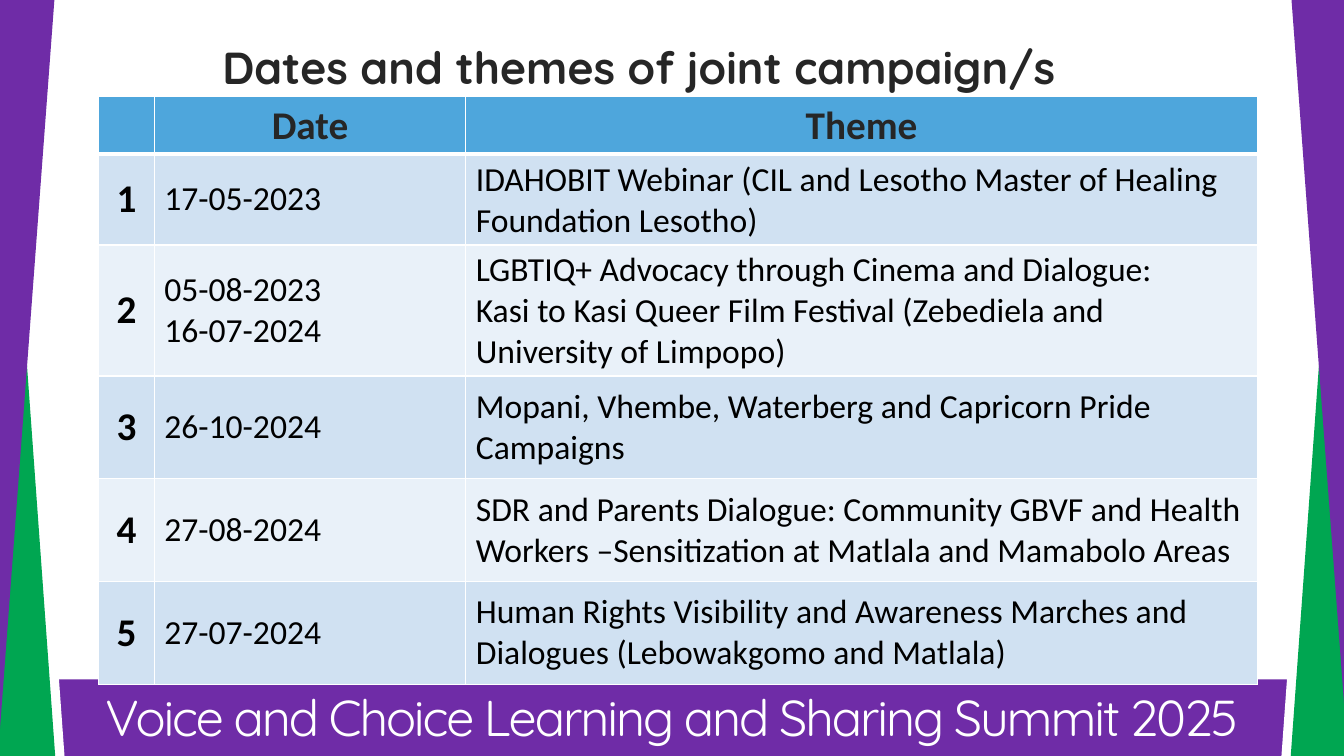
from lxml.etree import SubElement
from pptx import Presentation
from pptx.dml.color import RGBColor
from pptx.enum.shapes import MSO_SHAPE as Preset
from pptx.enum.text import MSO_ANCHOR as Anchor, MSO_AUTO_SIZE as AutoSize, PP_ALIGN as Align
from pptx.oxml.ns import qn
from pptx.util import Inches, Pt

WIDTH, HEIGHT = 13.33, 7.5
PURPLE, GREEN, WHITE = "6F2CA7", "00A651", "FFFFFF"
DARK, BLACK = "262626", "000000"
HEADER_FILL, BAND_FILLS = "4EA6DC", ("D0E1F2", "E9F1F9")

COLUMN_WIDTHS = (0.55, 3.09, 7.85)
ROW_HEIGHTS = (0.57, 0.9, 1.3, 1.02, 1.02, 1.02)
CAMPAIGNS = [
    (["17-05-2023"],
     ["IDAHOBIT Webinar (CIL and Lesotho Master of Healing Foundation Lesotho)"]),
    (["05-08-2023", "16-07-2024"],
     ["LGBTIQ+ Advocacy through Cinema and Dialogue:",
      "Kasi to Kasi Queer Film Festival (Zebediela and University of Limpopo)"]),
    (["26-10-2024"],
     ["Mopani, Vhembe, Waterberg and Capricorn Pride Campaigns"]),
    (["27-08-2024"],
     ["SDR and Parents Dialogue: Community GBVF and Health Workers "
      "–Sensitization at Matlala and Mamabolo Areas"]),
    (["27-07-2024"],
     ["Human Rights Visibility and Awareness Marches and Dialogues "
      "(Lebowakgomo and Matlala)"]),
]

# Outlines along the left edge; the right edge mirrors them.
EDGE_OUTLINES = [
    (WHITE, [(0.64, 7.5), (0.09, 7.5), (0.07, -0.02), (0.1, 0.03)]),
    (GREEN, [(0.55, 7.53), (0, 7.53), (-0.02, 0), (0.01, 0.05)]),
    (PURPLE, [(0, 0), (0.54, 0), (-0.02, 7.5), (0, 7.5)]),
]


def color(value):
    return RGBColor.from_string(value)


def paint(shape, value):
    shape.shadow.inherit = False
    shape.fill.solid()
    shape.fill.fore_color.rgb = color(value)
    shape.line.fill.background()


def add_outline(group, points, value):
    vertices = [(Inches(x), Inches(y)) for x, y in points]
    builder = group.shapes.build_freeform(*vertices[0])
    builder.add_line_segments(vertices[1:], close=True)
    paint(builder.convert_to_shape(), value)


def add_frame(slide):
    """Draw the bottom band and the slanted strips on both edges."""
    group = slide.shapes.add_group_shape()
    band = group.shapes.add_shape(
        Preset.RECTANGLE, Inches(-0.02), Inches(6.74), Inches(13.38), Inches(0.81))
    paint(band, PURPLE)
    for value, points in EDGE_OUTLINES:
        add_outline(group, points, value)
        add_outline(group, [(WIDTH + 0.02 - x, y) for x, y in points], value)


def write(frame, lines, size, value, font="Calibri", bold=False, align=Align.LEFT):
    for index, line in enumerate(lines):
        paragraph = frame.add_paragraph() if index else frame.paragraphs[0]
        paragraph.alignment = align
        run = paragraph.add_run()
        run.text = line
        run.font.name = font
        run.font.size = Pt(size)
        run.font.bold = bold
        run.font.color.rgb = color(value)


def add_title(slide):
    title = slide.shapes.title
    title.left, title.top = Inches(0.73), Inches(0.34)
    title.width, title.height = Inches(11.22), Inches(0.64)
    frame = title.text_frame
    frame.auto_size = AutoSize.NONE
    frame.vertical_anchor = Anchor.TOP
    write(frame, ["Dates and themes of joint campaign/s"], 32, DARK,
          "Quicksand", True, Align.CENTER)


def add_banner(slide):
    box = slide.shapes.add_textbox(0, Inches(6.9), Inches(WIDTH), Inches(0.56))
    frame = box.text_frame
    frame.word_wrap = True
    write(frame, ["Voice and Choice Learning and Sharing Summit 2025"], 36, WHITE,
          "Quicksand", align=Align.CENTER)
    paragraph = frame.paragraphs[0]
    paragraph.line_spacing = Pt(33)
    paragraph.runs[0].font._element.set("spc", "-150")


def style_cell(cell, value, bottom=1):
    """Give a cell white borders, a fill and middle anchoring."""
    properties = cell._tc.get_or_add_tcPr()
    for side, points in (("L", 1), ("R", 1), ("T", 1), ("B", bottom)):
        line = SubElement(properties, qn(f"a:ln{side}"), w=str(Pt(points)))
        fill = SubElement(line, qn("a:solidFill"))
        SubElement(fill, qn("a:srgbClr"), val=WHITE)
    cell.fill.solid()
    cell.fill.fore_color.rgb = color(value)
    cell.vertical_anchor = Anchor.MIDDLE


def add_campaign_table(slide):
    table = slide.shapes.add_table(
        len(ROW_HEIGHTS), len(COLUMN_WIDTHS), Inches(0.98), Inches(0.96),
        Inches(sum(COLUMN_WIDTHS)), Inches(sum(ROW_HEIGHTS))).table
    for column, width in zip(table.columns, COLUMN_WIDTHS):
        column.width = Inches(width)
    for row, height in zip(table.rows, ROW_HEIGHTS):
        row.height = Inches(height)

    for column, heading in enumerate(("", "Date", "Theme")):
        cell = table.cell(0, column)
        style_cell(cell, HEADER_FILL, bottom=3)
        if heading:
            write(cell.text_frame, [heading], 28, DARK, bold=True, align=Align.CENTER)

    for number, (dates, themes) in enumerate(CAMPAIGNS, start=1):
        cells = table.rows[number].cells
        for cell in cells:
            style_cell(cell, BAND_FILLS[(number - 1) % 2])
        write(cells[0].text_frame, [str(number)], 28, BLACK, bold=True, align=Align.CENTER)
        write(cells[1].text_frame, dates, 24, BLACK)
        write(cells[2].text_frame, themes, 24, BLACK)


def main():
    presentation = Presentation()
    presentation.slide_width = Inches(WIDTH)
    presentation.slide_height = Inches(HEIGHT)
    slide = presentation.slides.add_slide(presentation.slide_layouts[5])
    add_frame(slide)
    add_title(slide)
    add_banner(slide)
    add_campaign_table(slide)
    presentation.save("out.pptx")


if __name__ == "__main__":
    main()
